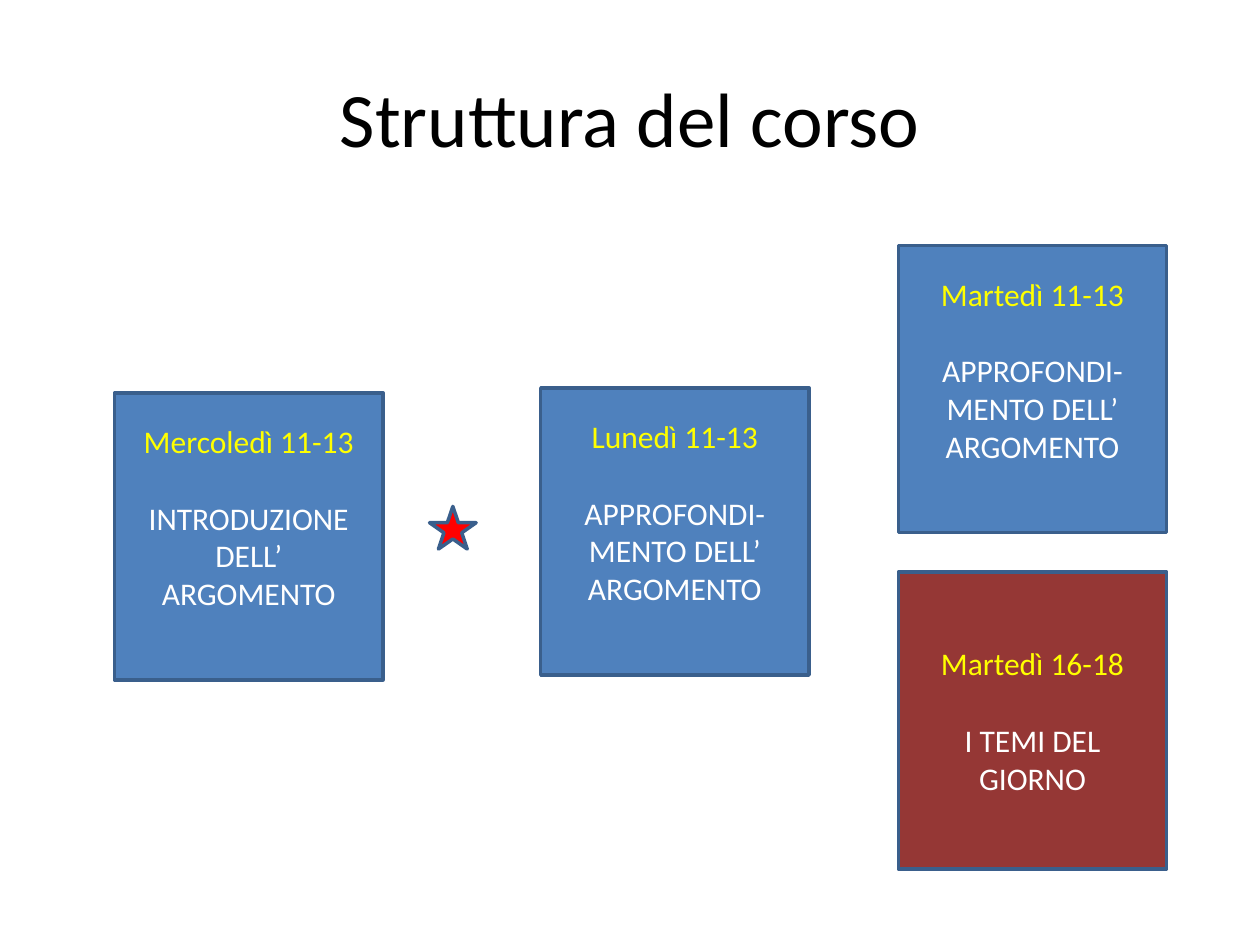
from pptx import Presentation
from pptx.dml.color import RGBColor
from pptx.enum.shapes import MSO_SHAPE
from pptx.enum.text import MSO_ANCHOR, PP_ALIGN
from pptx.util import Cm, Pt

COLOURS = {
    "title": "000000",
    "lesson": "4F81BD",
    "topics": "953735",
    "star": "FF0000",
    "outline": "3A5F8C",
    "time": "FFFF00",
    "subject": "FFFFFF",
}
CARD_WIDTH = 5.41
CARD_HEIGHT = 5.79
LINE_HEIGHT = 22  # points, one line of 18 pt text


class CoursePage:
    """Holds the style and the current slide."""

    font_name = "Calibri"

    def __init__(self, deck):
        self.page = deck.slides.add_slide(deck.slide_layouts[6])

    def colour(self, name):
        return RGBColor.from_string(COLOURS[name])

    def set_text(self, paragraph, text, size, colour):
        paragraph.text = text
        paragraph.alignment = PP_ALIGN.CENTER
        for span in paragraph.runs:
            span.font.name = self.font_name
            span.font.size = Pt(size)
            span.font.color.rgb = self.colour(colour)

    def title(self, text, left, top, width, height):
        box = self.page.shapes.add_textbox(Cm(left), Cm(top), Cm(width), Cm(height))
        frame = box.text_frame
        frame.word_wrap = True
        frame.vertical_anchor = MSO_ANCHOR.MIDDLE
        self.set_text(frame.paragraphs[0], text, 44, "title")

    def shape(self, kind, left, top, width, height, fill):
        shape = self.page.shapes.add_shape(kind, Cm(left), Cm(top), Cm(width), Cm(height))
        shape.shadow.inherit = False
        shape.fill.solid()
        shape.fill.fore_color.rgb = self.colour(fill)
        shape.line.color.rgb = self.colour("outline")
        shape.line.width = Pt(2)
        return shape

    def card(self, left, top, time, subject, height=CARD_HEIGHT, fill="lesson", lines_below=1):
        box = self.shape(MSO_SHAPE.RECTANGLE, left, top, CARD_WIDTH, height, fill)
        frame = box.text_frame
        frame.word_wrap = True
        frame.vertical_anchor = MSO_ANCHOR.MIDDLE
        # Room under the text lifts it above the middle of the card
        frame.margin_bottom = Cm(0.13) + Pt(LINE_HEIGHT * lines_below)
        heading = frame.paragraphs[0]
        self.set_text(heading, time, 18, "time")
        heading.space_after = Pt(LINE_HEIGHT)
        for text in subject:
            self.set_text(frame.add_paragraph(), text, 18, "subject")


def main():
    deck = Presentation()
    deck.slide_width, deck.slide_height = Cm(25.4), Cm(19.05)
    course = CoursePage(deck)

    # Title
    course.title("Struttura del corso", 1.27, 0.76, 22.86, 3.18)

    # Lessons on the topic
    deepening = ["APPROFONDI-MENTO DELL’", "ARGOMENTO"]
    course.card(2.31, 7.92, "Mercoledì 11-13", ["INTRODUZIONE DELL’", "ARGOMENTO"])
    course.card(10.9, 7.82, "Lunedì 11-13", deepening)
    course.card(18.11, 4.95, "Martedì 11-13", deepening)

    # Star between the first two lessons
    course.shape(MSO_SHAPE.STAR_5_POINT, 8.66, 10.21, 0.94, 0.86, "star")

    # Topics of the day
    course.card(18.11, 11.53, "Martedì 16-18", ["I TEMI DEL GIORNO"],
                height=5.99, fill="topics", lines_below=0)

    deck.save("out.pptx")


if __name__ == "__main__":
    main()
